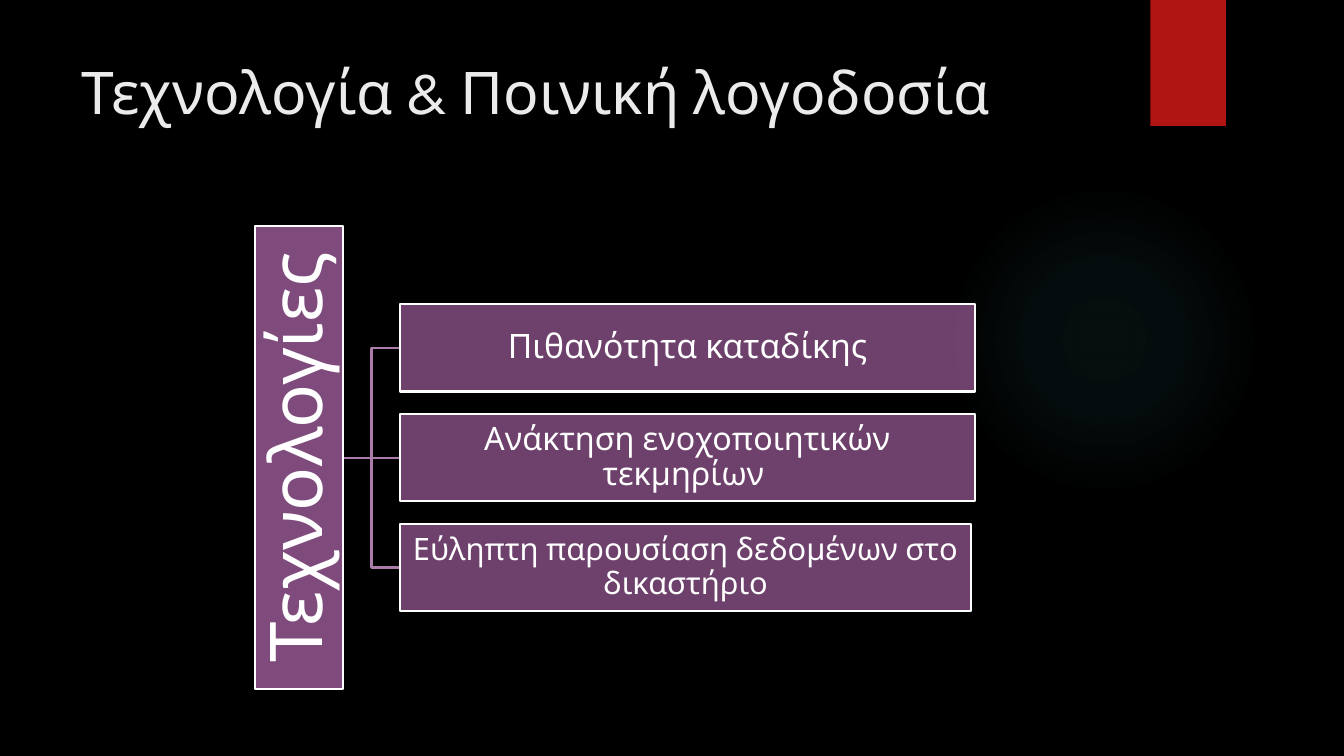
import pptx
import pptx.dml.color
import pptx.enum.shapes
import pptx.enum.text
import pptx.oxml
import pptx.oxml.ns
import pptx.util
from lxml import etree

Inches, Pt = pptx.util.Inches, pptx.util.Pt
SHAPE = pptx.enum.shapes.MSO_SHAPE
CONNECTOR = pptx.enum.shapes.MSO_CONNECTOR
ALIGN = pptx.enum.text.PP_ALIGN
ANCHOR = pptx.enum.text.MSO_ANCHOR

FONT = "League Spartan"
COLORS = {
    "background": "000000",
    "title": "EBEBEB",
    "tab": "B01513",
    "glow": "50B9C1",
    "node": "9E5E9B",
    "branch": "AB7CA9",
    "white": "FFFFFF",
}

# The tree: a vertical root and evenly spaced rows of topics to its right.
NODE_HEIGHT = 0.87
ROW_PITCH = 1.09
CENTER_Y = 4.54
ROOT_LENGTH = 4.59
ROOT_RIGHT = 3.4
TOPIC_LEFT = 3.97
TOPICS = [
    ("Πιθανότητα καταδίκης", 24, 5.7),
    ("Ανάκτηση ενοχοποιητικών τεκμηρίων ", 23, 5.7),
    ("Εύληπτη παρουσίαση δεδομένων στο δικαστήριο", 22, 5.66),
]


def rgb(name):
    return pptx.dml.color.RGBColor.from_string(COLORS[name])


def style_text(frame, text, size, color, align):
    frame.text = text
    frame.word_wrap = True
    paragraph = frame.paragraphs[0]
    paragraph.alignment = align
    font = paragraph.runs[0].font
    font.name, font.size = FONT, Pt(size)
    font.color.rgb = rgb(color)


def add_plain_shape(slide, kind, left, top, width, height):
    shape = slide.shapes.add_shape(
        kind, Inches(left), Inches(top), Inches(width), Inches(height))
    shape.shadow.inherit = False
    shape.line.fill.background()
    return shape


def add_glow(slide):
    """Add a faint circle that fades out from its centre."""
    glow = add_plain_shape(slide, SHAPE.OVAL, 9.41, 1.83, 3.08, 3.08)
    stops = "".join(
        f'<a:gs pos="{position}000"><a:srgbClr val="{COLORS["glow"]}">'
        f'<a:alpha val="{alpha}000"/></a:srgbClr></a:gs>'
        for position, alpha in [(0, 7), (36, 6), (69, 0)])
    gradient = pptx.oxml.parse_xml(
        f'<a:gradFill {pptx.oxml.ns.nsdecls("a")}><a:gsLst>{stops}</a:gsLst>'
        '<a:path path="circle"><a:fillToRect l="50000" t="50000" r="50000" b="50000"/>'
        '</a:path></a:gradFill>')
    glow._element.spPr.find(pptx.oxml.ns.qn("a:prstGeom")).addnext(gradient)


def add_tab(slide):
    tab = add_plain_shape(slide, SHAPE.RECTANGLE, 11.41, 0, 0.75, 1.25)
    tab.fill.solid()
    tab.fill.fore_color.rgb = rgb("tab")


def add_title(slide, text):
    title = slide.shapes.title
    title.left, title.top = Inches(0.71), Inches(0.5)
    title.width, title.height = Inches(10.29), Inches(1.53)
    style_text(title.text_frame, text, 42, "title", ALIGN.LEFT)
    title.text_frame.vertical_anchor = ANCHOR.TOP
    title.text_frame.auto_size = pptx.enum.text.MSO_AUTO_SIZE.NONE


def add_node(slide, text, size, left, center_y, width, opacity, inset):
    node = add_plain_shape(slide, SHAPE.RECTANGLE, left,
                           center_y - NODE_HEIGHT / 2, width, NODE_HEIGHT)
    node.fill.solid()
    node.fill.fore_color.rgb = rgb("node")
    color = node._element.spPr.find(
        f'{pptx.oxml.ns.qn("a:solidFill")}/{pptx.oxml.ns.qn("a:srgbClr")}')
    etree.SubElement(color, pptx.oxml.ns.qn("a:alpha"), val=f"{opacity}000")
    node.line.color.rgb = rgb("white")
    node.line.width = Pt(1.5)
    frame = node.text_frame
    style_text(frame, text, size, "white", ALIGN.CENTER)
    frame.paragraphs[0].line_spacing = 0.9
    frame.vertical_anchor = ANCHOR.MIDDLE
    frame.margin_left = frame.margin_right = Inches(inset)
    frame.margin_top = frame.margin_bottom = Inches(inset)
    return node


def add_branch(slide, topic_y):
    kind = CONNECTOR.STRAIGHT if topic_y == CENTER_Y else CONNECTOR.ELBOW
    branch = slide.shapes.add_connector(
        kind, Inches(ROOT_RIGHT), Inches(CENTER_Y),
        Inches(TOPIC_LEFT), Inches(topic_y))
    branch.line.color.rgb = rgb("branch")
    branch.line.width = Pt(1.5)
    etree.SubElement(branch._element.spPr, pptx.oxml.ns.qn("a:effectLst"))


def add_tree(slide):
    middle = len(TOPICS) // 2
    rows = [CENTER_Y + (row - middle) * ROW_PITCH for row in range(len(TOPICS))]
    for topic_y in rows:
        add_branch(slide, topic_y)
    root_left = ROOT_RIGHT - (NODE_HEIGHT + ROOT_LENGTH) / 2
    root = add_node(slide, "Τεχνολογίες", 52, root_left, CENTER_Y,
                    ROOT_LENGTH, 80, 0.04)
    root.rotation = 270
    for topic_y, (text, size, width) in zip(rows, TOPICS):
        add_node(slide, text, size, TOPIC_LEFT, topic_y, width, 70, 0.02)


def main():
    deck = pptx.Presentation()
    deck.slide_width, deck.slide_height = Inches(13.33), Inches(7.5)
    slide = deck.slides.add_slide(deck.slide_layouts[5])
    slide.background.fill.solid()
    slide.background.fill.fore_color.rgb = rgb("background")
    add_glow(slide)
    add_tab(slide)
    add_title(slide, "Τεχνολογία & Ποινική λογοδοσία")
    add_tree(slide)
    deck.save("out.pptx")


if __name__ == "__main__":
    main()
